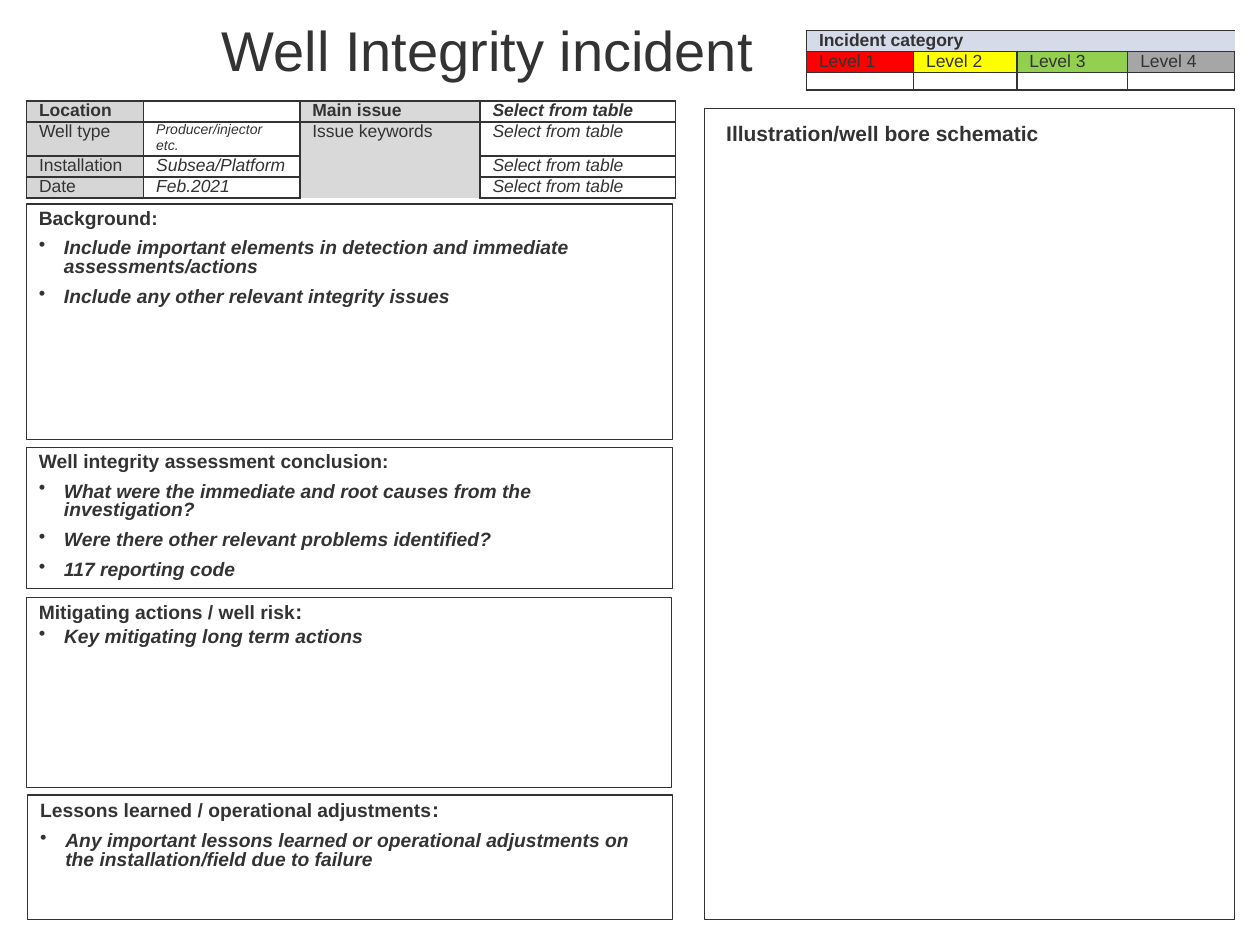
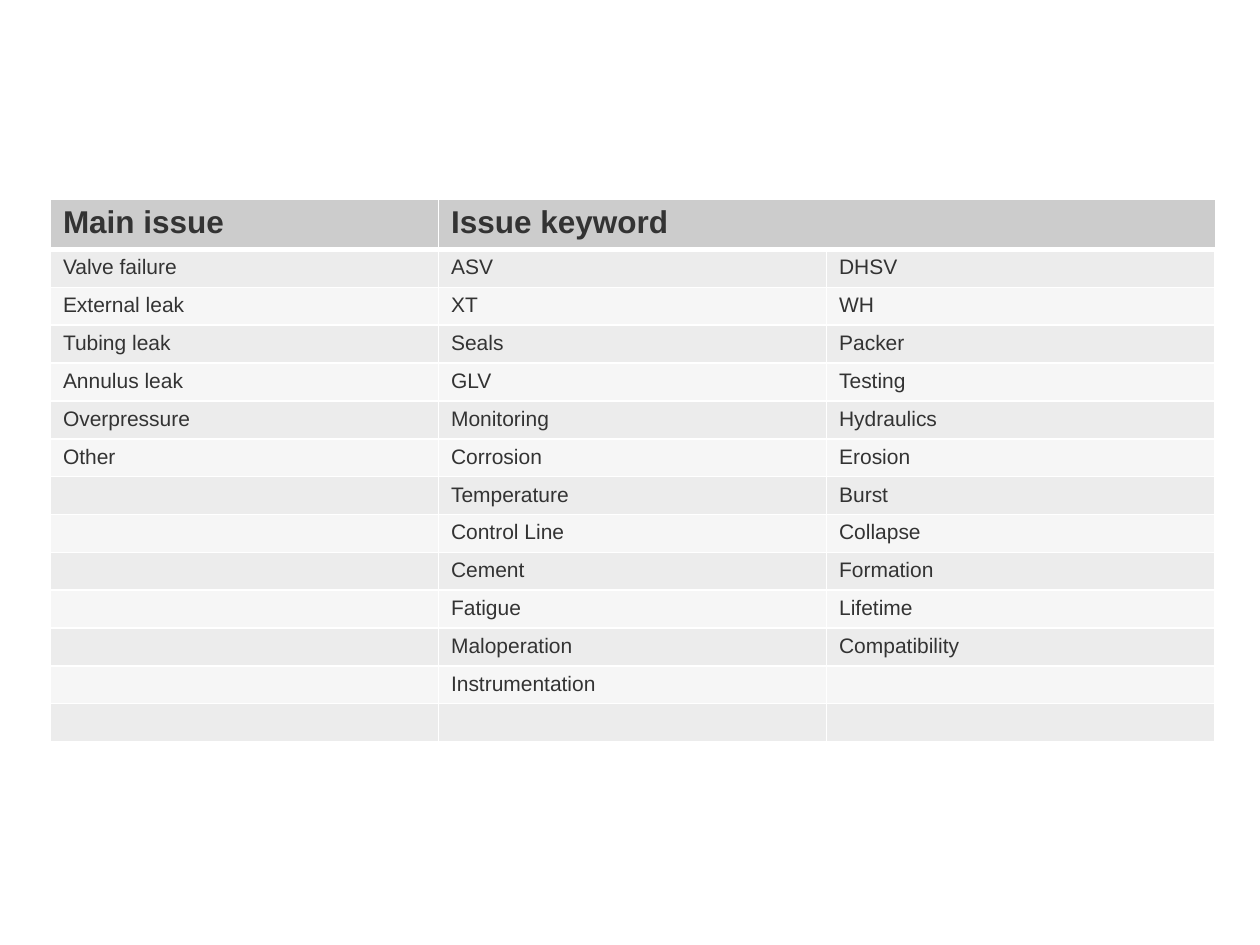
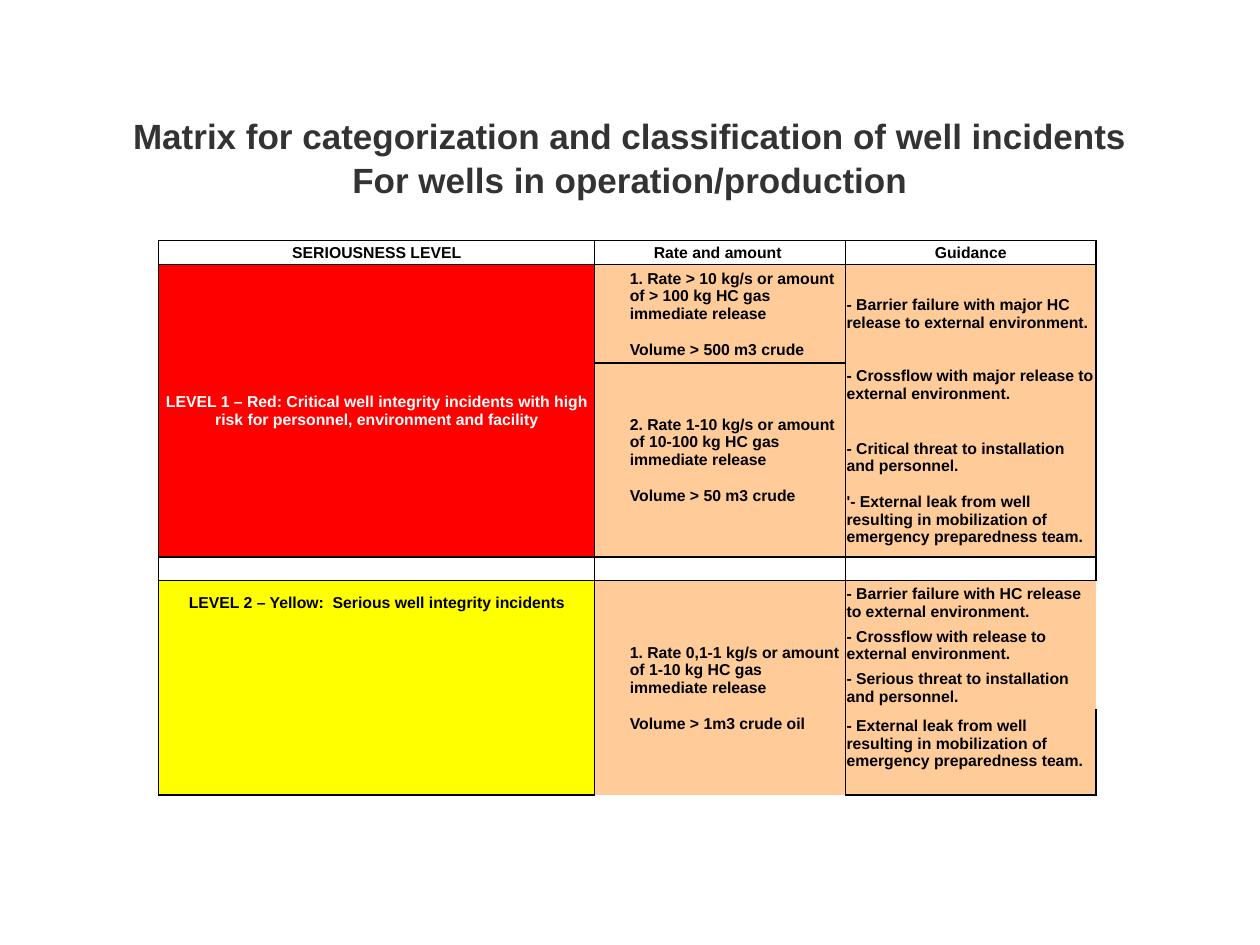
"""Build the well integrity incident template."""
from dataclasses import dataclass
from functools import partial

from lxml import etree
from pptx import Presentation
from pptx import util as u
from pptx.dml import color
from pptx.enum import shapes, text
from pptx.oxml import ns

FONT = "Arial"
INK, BLACK, WHITE = "333333", "000000", "FFFFFF"
RED, YELLOW, GREEN, GREY = "FF0000", "FFFF00", "92D050", "A6A6A6"
LABEL, KEYWORD_LABEL, CATEGORY = "D6D6D6", "D9D9D9", "D5DBE9"
HEADER, BAND_DARK, BAND_LIGHT, PEACH = "CCCCCC", "ECECEC", "F6F6F6", "FFCC99"
LEFT, CENTER = text.PP_ALIGN.LEFT, text.PP_ALIGN.CENTER
TOP, MIDDLE, BOTTOM = (text.MSO_ANCHOR.TOP, text.MSO_ANCHOR.MIDDLE,
                       text.MSO_ANCHOR.BOTTOM)


@dataclass
class Cell:
    """Content and look of one table cell, which may span others."""
    paragraphs: tuple = ()
    fill: str = WHITE
    size: float = 10
    bold: bool = False
    italic: bool = False
    ink: str = INK
    align: int = LEFT
    anchor: int = TOP
    margins: tuple = (0.1, 0, 0.1, 0)
    rows: int = 1
    columns: int = 1
    sides: str = "LRTB"


def rgb(value):
    """Turn a hex string into a colour."""
    return color.RGBColor.from_string(value)


def add_run(paragraph, words, size, ink=INK, bold=False, italic=False):
    """Add one formatted run."""
    run = paragraph.add_run()
    run.text = words
    font = run.font
    font.name, font.size, font.bold, font.italic = FONT, u.Pt(size), bold, italic
    font.color.rgb = rgb(ink)


def get_paragraph(frame, index):
    """Return the first paragraph of a frame, or add a further one."""
    return frame.add_paragraph() if index else frame.paragraphs[0]


def set_margins(target, margins):
    """Set the left, top, right and bottom insets of a frame or cell."""
    (target.margin_left, target.margin_top, target.margin_right,
     target.margin_bottom) = map(u.Inches, margins)


def add_title(slide, box, lines, size, bold=False, align=LEFT, inset=0):
    """Add a bottom-anchored title."""
    frame = slide.shapes.add_textbox(*map(u.Inches, box)).text_frame
    frame.word_wrap = True
    frame.vertical_anchor = BOTTOM
    set_margins(frame, (inset, 0, 0, 0))
    for index, line in enumerate(lines):
        paragraph = get_paragraph(frame, index)
        paragraph.alignment = align
        if len(lines) > 1:
            paragraph.line_spacing = 1.05
        add_run(paragraph, line, size, bold=bold)


def add_frame(slide, box, fill=None):
    """Add a thinly outlined rectangle."""
    shape = slide.shapes.add_shape(shapes.MSO_SHAPE.RECTANGLE, *map(u.Inches, box))
    shape.shadow.inherit = False
    if fill:
        shape.fill.solid()
        shape.fill.fore_color.rgb = rgb(fill)
    else:
        shape.fill.background()
    shape.line.color.rgb = rgb(INK)
    shape.line.width = u.Pt(0.75)
    return shape


def add_bullet(paragraph):
    """Give a paragraph a hanging bullet."""
    properties = paragraph._p.get_or_add_pPr()
    properties.set("marL", str(u.Inches(0.2)))
    properties.set("indent", str(u.Inches(-0.2)))
    bullet_color = etree.SubElement(properties, ns.qn("a:buClr"))
    etree.SubElement(bullet_color, ns.qn("a:srgbClr"), val=INK)
    etree.SubElement(properties, ns.qn("a:buChar"), char="•")


def add_section(slide, box, heading, bullets, colon_size=11, heading_gap=4.6):
    """Add a framed section with a heading and bullets."""
    frame = add_frame(slide, box, WHITE).text_frame
    frame.word_wrap = True
    frame.vertical_anchor = TOP
    for index, words in enumerate([heading, *bullets]):
        paragraph = get_paragraph(frame, index)
        if index:
            add_bullet(paragraph)
            paragraph.space_before = u.Pt(1.9)
        paragraph.alignment = LEFT
        paragraph.line_spacing = 0.8
        paragraph.space_after = u.Pt(4.6 if index else heading_gap)
        add_run(paragraph, words, 11, bold=True, italic=index > 0)
        if not index:
            add_run(paragraph, ":", colon_size, bold=True)


def set_borders(cell, sides, ink, widths):
    """Draw the named sides of a cell and clear the others."""
    properties = cell._tc.get_or_add_tcPr()
    for side in "LRTB":
        line = etree.SubElement(properties, ns.qn(f"a:ln{side}"))
        if side in sides:
            line.set("w", str(u.Pt(widths.get(side, 1))))
            fill = etree.SubElement(line, ns.qn("a:solidFill"))
            etree.SubElement(fill, ns.qn("a:srgbClr"), val=ink)
        else:
            line.set("w", "0")
            etree.SubElement(line, ns.qn("a:noFill"))


def fill_cell(cell, content):
    """Write the text of a cell."""
    set_margins(cell, content.margins)
    cell.vertical_anchor = content.anchor
    for index, words in enumerate(content.paragraphs):
        paragraph = get_paragraph(cell.text_frame, index)
        paragraph.alignment = content.align
        if index:
            paragraph.space_before = u.Pt(content.size * 1.15)
        add_run(paragraph, words, content.size, content.ink, content.bold,
                content.italic)
    if not content.paragraphs:
        etree.SubElement(cell.text_frame.paragraphs[0]._p, ns.qn("a:endParaRPr"),
                         sz=str(content.size * 100))


def add_grid(slide, corner, columns, rows, cells, ink, header_rule=1):
    """Add a table from cells keyed by row and column."""
    box = (*corner, sum(columns), sum(rows))
    table = slide.shapes.add_table(len(rows), len(columns),
                                   *map(u.Inches, box)).table
    table.first_row = table.horz_banding = False
    for column, width in zip(table.columns, columns):
        column.width = u.Inches(width)
    for row, height in zip(table.rows, rows):
        row.height = u.Inches(height)
    for (top, left), content in cells.items():
        bottom, right = top + content.rows - 1, left + content.columns - 1
        for row in range(top, bottom + 1):
            for column in range(left, right + 1):
                edges = {"L": column == left, "R": column == right,
                         "T": row == top, "B": row == bottom}
                sides = [side for side in content.sides if edges[side]]
                widths = {0: {"B": header_rule}, 1: {"T": header_rule}}.get(row, {})
                cell = table.cell(row, column)
                set_borders(cell, sides, ink, widths)
                cell.fill.solid()
                cell.fill.fore_color.rgb = rgb(content.fill)
        origin = table.cell(top, left)
        if (bottom, right) != (top, left):
            origin.merge(table.cell(bottom, right))
        fill_cell(origin, content)


def add_category_table(slide, corner):
    """Add the incident category key."""
    levels = [RED, YELLOW, GREEN, GREY]
    cells = {(0, 0): Cell(("Incident category",), CATEGORY, bold=True, columns=4)}
    for column, fill in enumerate(levels):
        cells[1, column] = Cell((f"Level {column + 1}",), fill)
        cells[2, column] = Cell(size=8)
    add_grid(slide, corner, [0.85, 0.82, 0.88, 0.85], [0.16, 0.16, 0.14], cells, INK)


def add_facts_table(slide, corner):
    """Add the table of well facts and issues."""
    facts = [("Location", ""), ("Well type", "Producer/injector etc."),
             ("Installation", "Subsea/Platform"), ("Date", "Feb.2021")]
    cells = {}
    for row, (label, value) in enumerate(facts):
        first = row == 0
        cells[row, 0] = Cell((label,), LABEL, bold=first)
        cells[row, 1] = Cell((value,) if value else (), size=8 if row == 1 else 10,
                             italic=True)
        cells[row, 3] = Cell(("Select from table",), bold=first, italic=True)
    cells[0, 2] = Cell(("Main issue",), KEYWORD_LABEL, bold=True)
    cells[1, 2] = Cell(("Issue keywords",), KEYWORD_LABEL, rows=3)
    add_grid(slide, corner, [0.93, 1.24, 1.43, 1.55], [0.16, 0.27, 0.16, 0.16],
             cells, INK)


def add_schematic_area(slide, box):
    """Add the empty frame for the schematic and its label."""
    add_frame(slide, box)
    left, top = box[:2]
    label = (left + 0.07, top + 0.09, 2.69, 0.26)
    frame = slide.shapes.add_textbox(*map(u.Inches, label)).text_frame
    frame.word_wrap = False
    paragraph = frame.paragraphs[0]
    paragraph.alignment = CENTER
    paragraph.line_spacing = 0.8
    add_run(paragraph, "Illustration/well bore schematic", 12, bold=True)


def build_incident(slide):
    """Build the incident form."""
    add_title(slide, (0.4, 0.08, 9.3, 0.58), ["Well Integrity incident"], 32,
              inset=1.36)
    add_section(slide, (0.21, 1.62, 5.13, 1.87), "Background", [
        "Include important elements in detection and immediate assessments/actions",
        "Include any other relevant integrity issues"])
    add_section(slide, (0.21, 3.55, 5.13, 1.12),
                "Well integrity assessment conclusion", [
        "What were the immediate and root causes from the investigation?",
        "Were there other relevant problems identified?",
        "117 reporting code"])
    add_section(slide, (0.21, 4.74, 5.12, 1.51), "Mitigating actions / well risk",
                ["Key mitigating long term actions"], 12, 1.2)
    add_section(slide, (0.22, 6.31, 5.12, 0.99),
                "Lessons learned / operational adjustments", [
        "Any important lessons learned or operational adjustments on the "
        "installation/field due to failure"], 12)
    add_schematic_area(slide, (5.59, 0.86, 4.21, 6.44))
    add_category_table(slide, (6.4, 0.24))
    add_facts_table(slide, (0.21, 0.8))


def build_keywords(slide):
    """Build the table of issues and keywords."""
    issues = ["Valve failure", "External leak", "Tubing leak", "Annulus leak",
              "Overpressure", "Other"]
    keywords = ["ASV", "XT", "Seals", "GLV", "Monitoring", "Corrosion", "Temperature",
                "Control Line", "Cement", "Fatigue", "Maloperation",
                "Instrumentation"]
    more_keywords = ["DHSV", "WH", "Packer", "Testing", "Hydraulics", "Erosion",
                     "Burst", "Collapse", "Formation", "Lifetime", "Compatibility"]
    body_rows = 13
    padded = partial(Cell, margins=(0.1, 0.05, 0.1, 0.05))
    heading = partial(padded, fill=HEADER, size=18, bold=True)
    cells = {(0, 0): heading(("Main issue",)),
             (0, 1): heading(("Issue keyword",), columns=2)}
    for column, words in enumerate([issues, keywords, more_keywords]):
        for row in range(body_rows):
            cells[row + 1, column] = padded(
                tuple(words[row:row + 1]), BAND_LIGHT if row % 2 else BAND_DARK, 12)
    add_grid(slide, (0.4, 1.58), [3.08] * 3, [0.38] + [0.28] * body_rows, cells,
             WHITE, header_rule=3)


def build_matrix(slide):
    """Build the seriousness matrix."""
    add_title(slide, (0.35, 0.46, 9.3, 1.13),
              ["Matrix for categorization and classification of well incidents",
               "For wells in operation/production"], 20, True, CENTER)
    plain = partial(Cell, size=9, bold=True, ink=BLACK, anchor=MIDDLE,
                    margins=(0.01, 0.01, 0.01, 0))
    level = partial(plain, align=CENTER, columns=4)
    rate = partial(plain, fill=PEACH, margins=(0.28, 0.01, 0.01, 0))
    guidance = partial(plain, fill=PEACH)
    add_grid(slide, (1.26, 1.91), [1.99, 0.49, 0.49, 0.49, 1.99, 1.99],
             [0.19, 0.78, 0.34, 0.18, 1.02, 0.19, 0.34, 0.34, 0.34, 0.68], {
        (0, 0): level(("SERIOUSNESS LEVEL",)),
        (0, 4): plain(("Rate and amount ",), align=CENTER),
        (0, 5): plain(("Guidance",), align=CENTER),
        (1, 0): level(("LEVEL 1 – Red: Critical well integrity incidents with high "
                       "risk for personnel, environment and facility",),
                      fill=RED, ink=WHITE, rows=4),
        (1, 4): rate(("1. Rate > 10 kg/s or amount of > 100 kg HC gas immediate "
                      "release", "Volume > 500 m3 crude")),
        (2, 4): rate(("2. Rate 1-10 kg/s or amount of 10-100 kg HC gas immediate "
                      "release", "Volume > 50 m3 crude"), rows=3),
        (1, 5): guidance(("- Barrier failure with major HC release to external "
                          "environment.",), sides="LTR"),
        (2, 5): guidance(("- Crossflow with major release to external "
                          "environment.",), sides="LR"),
        (3, 5): guidance(sides="LR"),
        (4, 5): guidance(("- Critical threat to installation and personnel.",
                          "'- External leak from well resulting in mobilization of "
                          "emergency preparedness team."), sides="LRB"),
        (5, 0): plain(columns=2, sides="LTB"),
        (5, 2): plain(sides="TB"),
        (5, 3): plain(sides="TRB"),
        (5, 4): plain(),
        (5, 5): plain(),
        (6, 0): level(("LEVEL 2 – Yellow:  Serious well integrity incidents",),
                      fill=YELLOW, sides="LTR"),
        (7, 0): level(fill=YELLOW, sides="LR"),
        (8, 0): plain(fill=YELLOW, sides="L"),
        (8, 1): plain(fill=YELLOW, sides=""),
        (8, 2): plain(fill=YELLOW, sides=""),
        (8, 3): plain(fill=YELLOW, sides="R"),
        (9, 0): level(fill=YELLOW, sides="LRB"),
        (6, 4): rate(("1. Rate 0,1-1 kg/s or amount of 1-10 kg HC gas immediate "
                      "release", "Volume > 1m3 crude oil"), rows=4),
        (6, 5): guidance(("- Barrier failure with HC release to external "
                          "environment.",), sides="LT"),
        (7, 5): guidance(("- Crossflow with release to external environment.",),
                         sides="L"),
        (8, 5): guidance(("- Serious threat to installation and personnel.",),
                         sides="L"),
        (9, 5): guidance(("- External leak from well resulting in mobilization of "
                          "emergency preparedness team.",), sides="LRB",
                         margins=(0.01, 0.01, 0.01, 0.14)),
    }, BLACK)


def main():
    """Build and save the presentation."""
    presentation = Presentation()
    presentation.slide_width, presentation.slide_height = u.Inches(10), u.Inches(7.5)
    for build in (build_incident, build_keywords, build_matrix):
        build(presentation.slides.add_slide(presentation.slide_layouts[6]))
    presentation.save("out.pptx")


if __name__ == "__main__":
    main()
